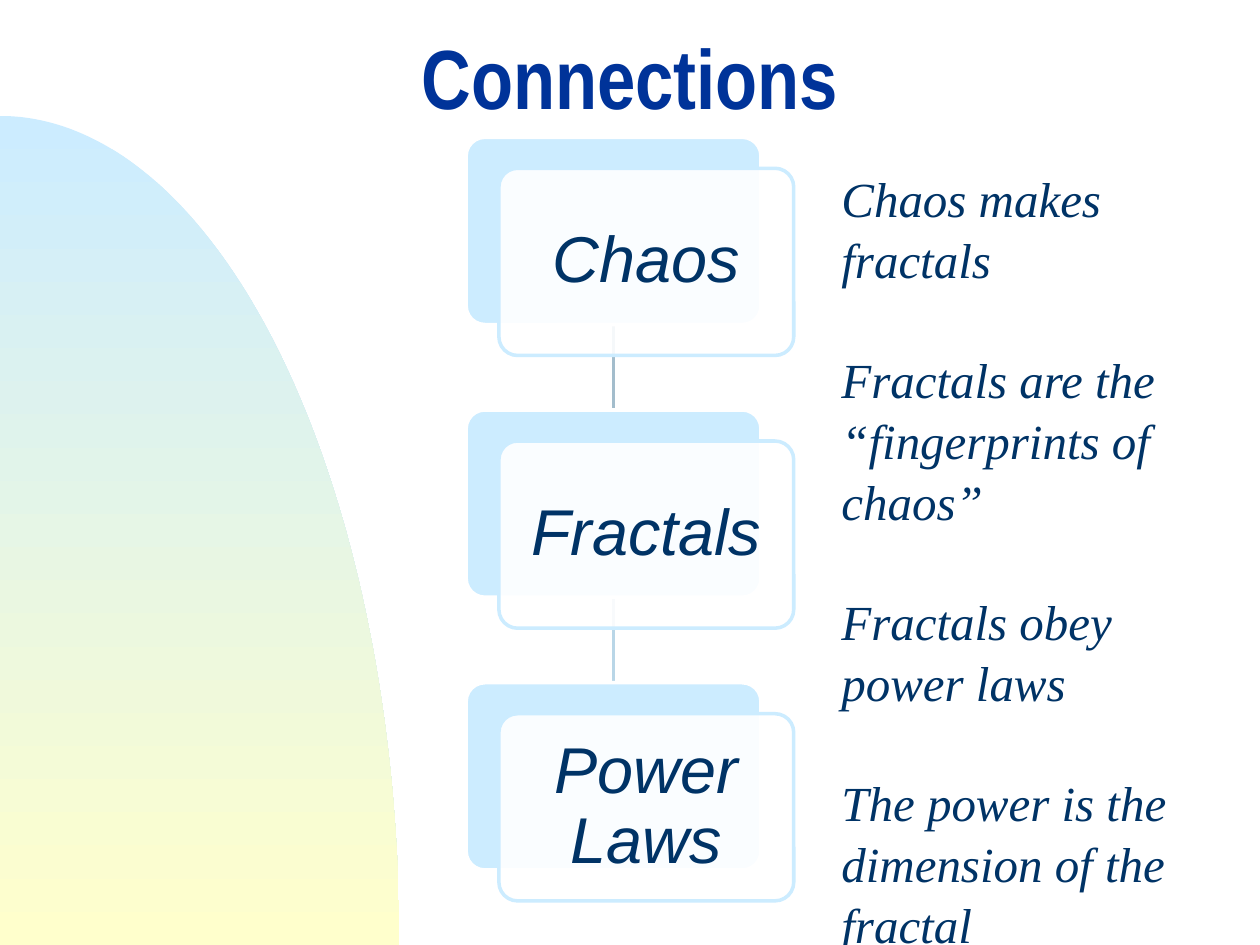
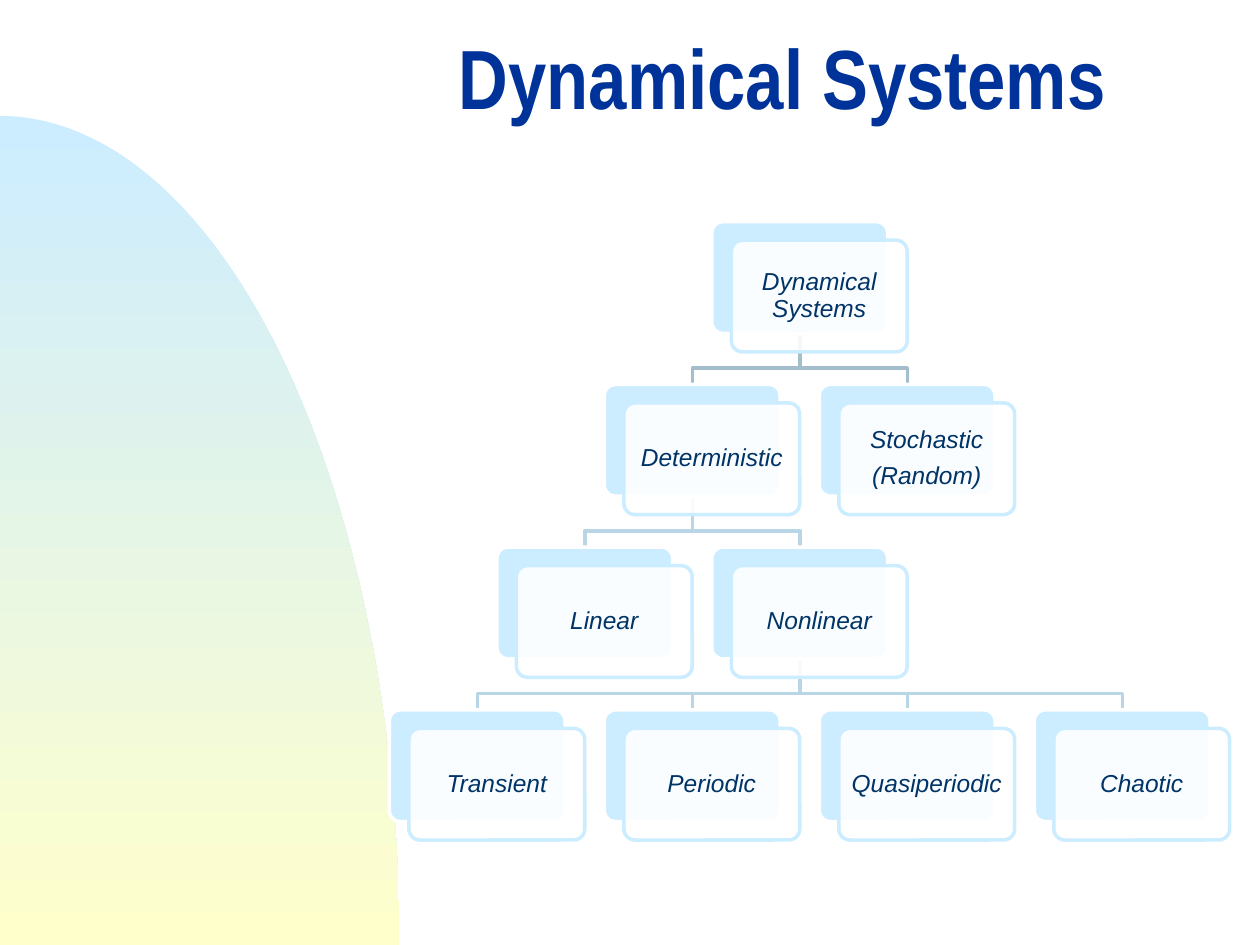
from math import cos, pi, sin

from lxml import etree
from pptx import Presentation
from pptx.dml.color import RGBColor
from pptx.enum.shapes import MSO_CONNECTOR, MSO_SHAPE
from pptx.enum.text import MSO_ANCHOR, PP_ALIGN
from pptx.oxml.ns import qn
from pptx.util import Emu, Inches, Pt

ROUNDED = MSO_SHAPE.ROUNDED_RECTANGLE
STRAIGHT = MSO_CONNECTOR.STRAIGHT
CENTER = PP_ALIGN.CENTER
MIDDLE = MSO_ANCHOR.MIDDLE
BOTTOM_SITE, TOP_SITE = 2, 0

COLORS = {
    "title": "003399", "text": "003366", "sky": "CCECFF", "sand": "FFFFCC",
    "white": "FFFFFF", "first_link": "A3BDCC", "link": "B9D6E7",
}
TITLE_ONLY = 5
TITLE_TOP, TITLE_HEIGHT, TITLE_RIGHT = 0.08, 1.25, 9.75

# Proportions of a diagram, in card widths
CARD_HEIGHT = 0.635
FACE_DX, FACE_DY = 1 / 9, 0.105
COLUMN, ROW = 11 / 9, 0.925
BEND = 0.68  # share of the gap above a branch's crossbar

# Each node: lines of text, column, row, index of the parent
CONNECTION_NODES = [
    (["Chaos"], 0, 0, None),
    (["Fractals"], 0, 1, 0),
    (["Power Laws"], 0, 2, 1),
]
SYSTEM_NODES = [
    (["Dynamical Systems"], 1.5, 0, None),
    (["Deterministic"], 1, 1, 0),
    (["Stochastic", "(Random)"], 2, 1, 0),
    (["Linear"], 0.5, 2, 1),
    (["Nonlinear"], 1.5, 2, 1),
    (["Transient"], 0, 3, 4),
    (["Periodic"], 1, 3, 4),
    (["Quasiperiodic"], 2, 3, 4),
    (["Chaotic"], 3, 3, 4),
]
NOTES = [
    "Chaos makes fractals",
    "Fractals are the “fingerprints of chaos”",
    "Fractals obey power laws",
    "The power is the dimension of the fractal",
]


def rgb(name):
    return RGBColor.from_string(COLORS[name])


def style_line(shape, color):
    shape.line.color.rgb = rgb(color)
    shape.line.width = Pt(2)


def style_runs(p, font, size, color, bold=False, italic=False):
    for r in p.runs:
        r.font.name, r.font.size = font, Pt(size)
        r.font.bold, r.font.italic = bold, italic
        r.font.color.rgb = rgb(color)


def send_to_back(shapes, shape):
    shapes.element.insert(2, shape.element)


def add_sweep(prs, s):
    """Draw the quarter ellipse and hand it to the master."""
    rx, ry, steps = Inches(3.17), Inches(6.58), 90
    base = prs.slide_height
    arc = [(round(rx * sin(i * pi / 2 / steps)),
            round(base - ry * cos(i * pi / 2 / steps))) for i in range(steps + 1)]
    builder = s.shapes.build_freeform(0, base)
    builder.add_line_segments(arc, close=True)
    sp = builder.convert_to_shape()
    sp.shadow.inherit = False
    sp.line.fill.background()
    sp.fill.gradient()
    sp.fill.gradient_angle = 270
    for stop, position, color in zip(sp.fill.gradient_stops, (0, 1), ("sky", "sand")):
        stop.position = position
        stop.color.rgb = rgb(color)
    send_to_back(prs.slide_master.shapes, sp)


def add_titled_slide(prs, title, left):
    s = prs.slides.add_slide(prs.slide_layouts[TITLE_ONLY])
    sp = s.shapes.title
    sp.left, sp.top = Inches(left), Inches(TITLE_TOP)
    sp.width, sp.height = Inches(TITLE_RIGHT - left), Inches(TITLE_HEIGHT)
    tf = sp.text_frame
    tf.text = title
    tf.vertical_anchor = MIDDLE
    p = tf.paragraphs[0]
    p.alignment, p.line_spacing = CENTER, 0.7
    style_runs(p, "Arial Narrow", 48, "title", bold=True)
    return s


def add_panel(s, x, y, unit, fill, line):
    sp = s.shapes.add_shape(ROUNDED, Inches(x), Inches(y),
                            Inches(unit), Inches(unit * CARD_HEIGHT))
    sp.adjustments[0] = 0.1
    sp.shadow.inherit = False
    sp.fill.solid()
    sp.fill.fore_color.rgb = rgb(fill)
    style_line(sp, line)
    return sp


def add_card(s, x, y, unit, lines, size):
    """Add a back panel and a translucent text panel; return the back one."""
    back = add_panel(s, x, y, unit, "sky", "white")
    face = add_panel(s, x + unit * FACE_DX, y + unit * FACE_DY, unit, "white", "sky")
    color = face.element.spPr.find(qn("a:solidFill"))[0]
    etree.SubElement(color, qn("a:alpha"), val="90000")
    tf = face.text_frame
    tf.text = "\n".join(lines)
    tf.word_wrap, tf.vertical_anchor = True, MIDDLE
    inset = Pt(0.3 * size)
    tf.margin_left = tf.margin_right = tf.margin_top = tf.margin_bottom = inset
    for p in tf.paragraphs:
        p.alignment, p.line_spacing, p.space_after = CENTER, 0.9, Pt(0.4 * size)
        style_runs(p, "Arial", size, "text", italic=True)
    return back


def add_link(s, parent, child, color):
    """Join two cards: straight down, or by a bent branch, behind the cards."""
    x1, y1 = parent.left + parent.width // 2, parent.top + parent.height
    x2, y2 = child.left + child.width // 2, child.top
    if x1 == x2:
        link = s.shapes.add_connector(STRAIGHT, x1, y1, x2, y2)
        link.begin_connect(parent, BOTTOM_SITE)
        link.end_connect(child, TOP_SITE)
        etree.SubElement(link.element.spPr, qn("a:effectLst"))
    else:
        bend = Emu(round(y1 + BEND * (y2 - y1)))
        builder = s.shapes.build_freeform(x1, y1)
        builder.add_line_segments([(x1, bend), (x2, bend), (x2, y2)], close=False)
        link = builder.convert_to_shape()
        link.shadow.inherit = False
        link.fill.background()
    style_line(link, color)
    send_to_back(s.shapes, link)


def add_hierarchy(s, x, y, width, nodes, size):
    last_column = max(column for _, column, _, _ in nodes)
    unit = width / (last_column * COLUMN + 1 + FACE_DX)
    cards = [add_card(s, x + column * COLUMN * unit, y + row * ROW * unit,
                      unit, lines, size) for lines, column, row, _ in nodes]
    for card, (_, _, _, parent) in zip(cards, nodes):
        if parent is not None:
            add_link(s, cards[parent], card, "link" if parent else "first_link")


def add_notes_column(s, x, y, width, height):
    tf = s.shapes.add_textbox(Inches(x), Inches(y), Inches(width),
                              Inches(height)).text_frame
    tf.word_wrap = True
    tf.text = "\n".join(NOTES)
    for p in tf.paragraphs:
        p.line_spacing, p.space_after = 1.04, Pt(33.5)
        style_runs(p, "Times New Roman", 28, "text", italic=True)
    tf.paragraphs[-1].space_after = Pt(0)


def main():
    prs = Presentation()
    prs.slide_width, prs.slide_height = Inches(10), Inches(7.5)

    s = add_titled_slide(prs, "Connections", 0.25)
    add_sweep(prs, s)
    add_hierarchy(s, 3.7, 1.09, 2.6, CONNECTION_NODES, 37)
    add_notes_column(s, 6.58, 1.27, 3.17, 6.23)

    s = add_titled_slide(prs, "Dynamical Systems", 2.67)
    add_hierarchy(s, 3.09, 1.76, 6.67, SYSTEM_NODES, 14)

    prs.save("out.pptx")


if __name__ == "__main__":
    main()
